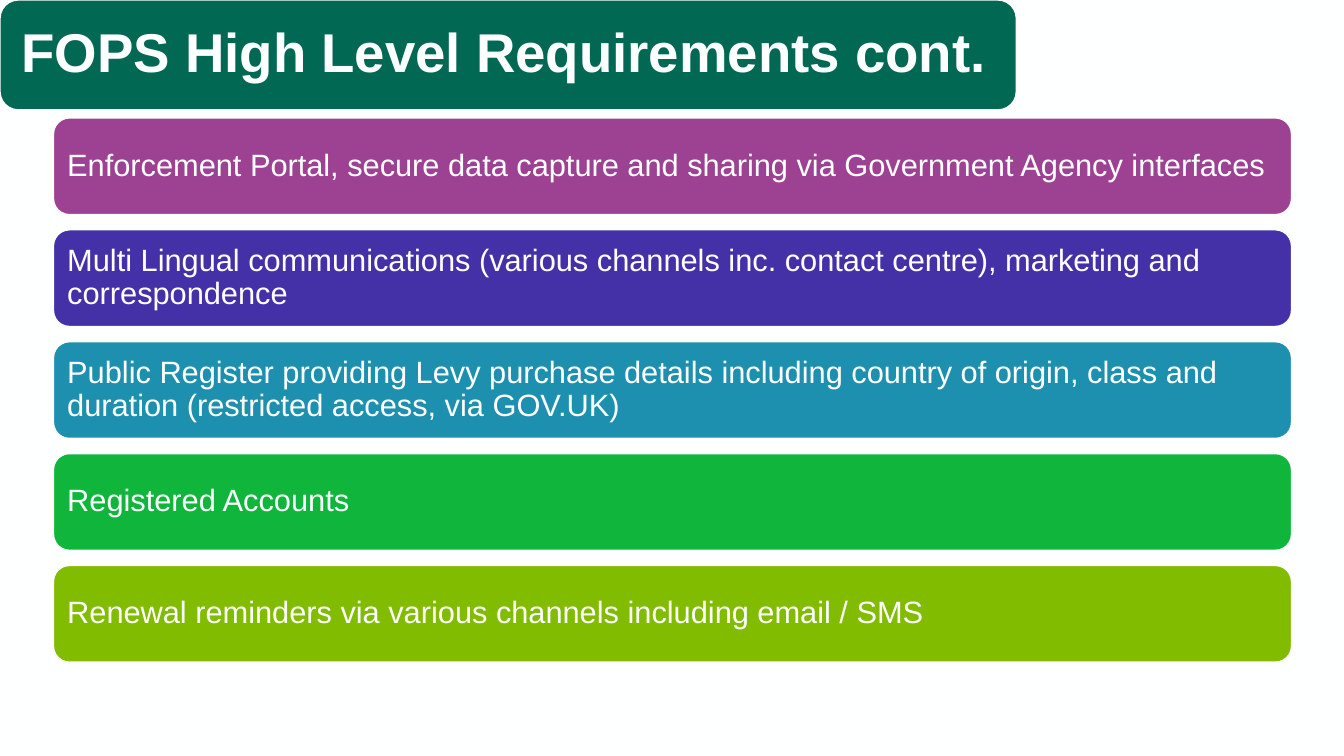
from pptx import Presentation
from pptx.dml.color import RGBColor
from pptx.enum.shapes import MSO_SHAPE
from pptx.enum.text import MSO_ANCHOR, PP_ALIGN
from pptx.util import Inches, Pt

WHITE = RGBColor(0xFE, 0xFF, 0xFF)
DARK_GREEN = RGBColor(0x00, 0x68, 0x53)
PURPLE = RGBColor(0x9D, 0x42, 0x92)
INDIGO = RGBColor(0x44, 0x30, 0xA7)
TEAL = RGBColor(0x1E, 0x90, 0xAF)
GREEN = RGBColor(0x0F, 0xB6, 0x3B)
LIME = RGBColor(0x81, 0xBC, 0x00)

REQUIREMENTS = [
    ("Enforcement Portal, secure data capture and sharing via Government Agency interfaces", PURPLE),
    ("Multi Lingual communications (various channels inc. contact centre), "
     "marketing and correspondence", INDIGO),
    ("Public Register providing Levy purchase details including country of origin, "
     "class and duration (restricted access, via GOV.UK)", TEAL),
    ("Registered Accounts", GREEN),
    ("Renewal reminders via various channels including email / SMS", LIME),
]
BAR_LEFT, BAR_TOP = 0.53, 1.17
BAR_WIDTH, BAR_HEIGHT = 12.28, 0.96
ROW_PITCH = 1.11

deck = Presentation()
deck.slide_width, deck.slide_height = Inches(13.33), Inches(7.5)
page = deck.slides.add_slide(deck.slide_layouts[6])
page.background.fill.solid()
page.background.fill.fore_color.rgb = WHITE


def add_bar(left, top, width, height, color, text, size, margin, bold=False):
    """Add a rounded bar with left-aligned, vertically centred text."""
    bar = page.shapes.add_shape(MSO_SHAPE.ROUNDED_RECTANGLE, Inches(left), Inches(top),
                                Inches(width), Inches(height))
    bar.shadow.inherit = False
    bar.fill.solid()
    bar.fill.fore_color.rgb = color
    bar.line.color.rgb = WHITE
    bar.line.width = Pt(1)
    frame = bar.text_frame
    frame.word_wrap = True
    frame.vertical_anchor = MSO_ANCHOR.MIDDLE
    frame.margin_left = frame.margin_right = Inches(margin)
    frame.margin_top = frame.margin_bottom = Inches(margin)
    para = frame.paragraphs[0]
    para.alignment = PP_ALIGN.LEFT
    para.line_spacing = 0.9
    span = para.add_run()
    span.text = text
    span.font.name = "Arial"
    span.font.size = Pt(size)
    span.font.bold = bold
    span.font.color.rgb = WHITE


add_bar(0, 0, 10.08, 1.09, DARK_GREEN, "FOPS High Level Requirements cont.", 39, 0.16, bold=True)

for row, (requirement, color) in enumerate(REQUIREMENTS):
    add_bar(BAR_LEFT, BAR_TOP + row * ROW_PITCH, BAR_WIDTH, BAR_HEIGHT,
            color, requirement, 22, 0.09)

deck.save("out.pptx")
